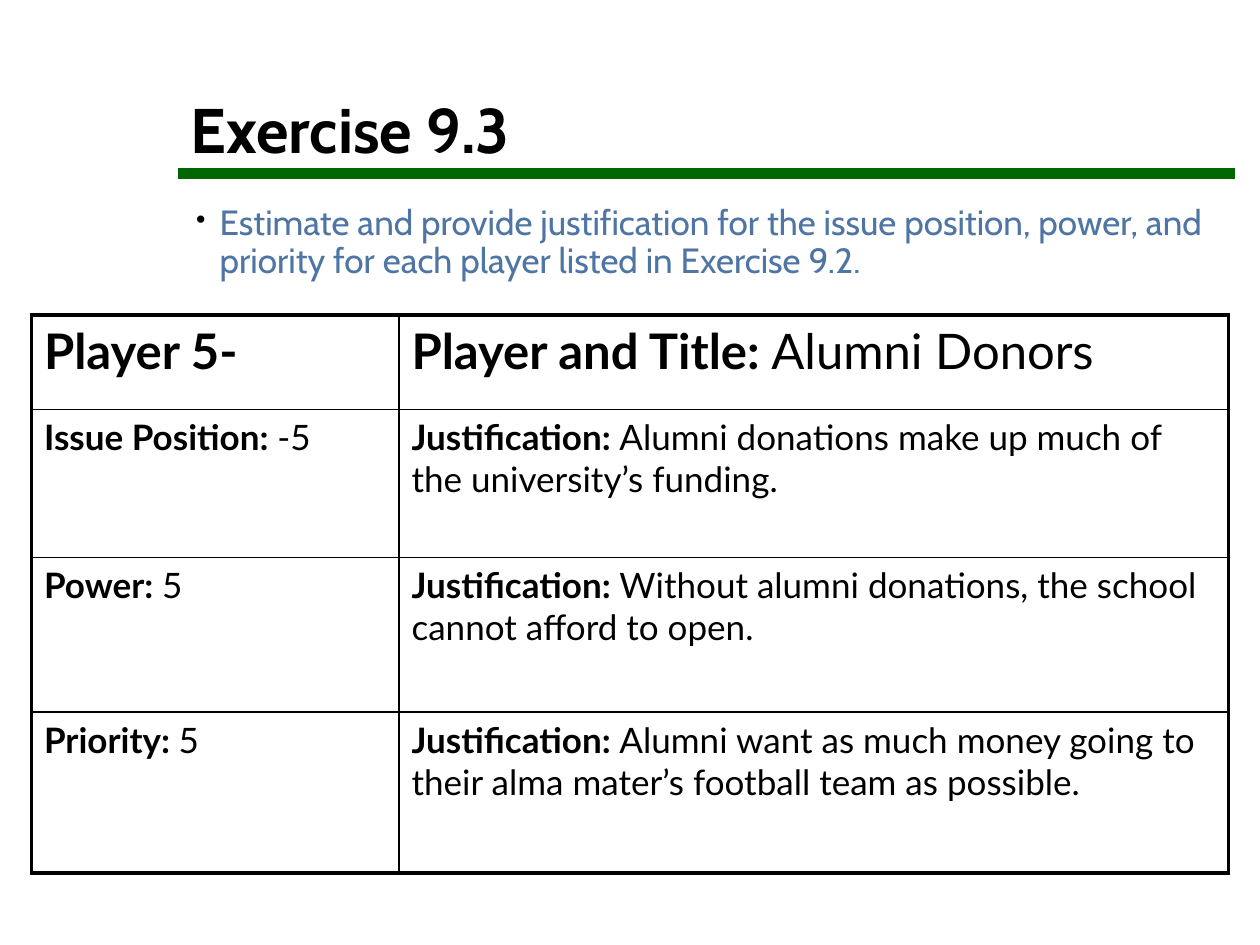
from dataclasses import dataclass

from lxml.etree import SubElement
from pptx import Presentation
from pptx.dml.color import RGBColor
from pptx.enum.shapes import MSO_CONNECTOR
from pptx.enum.text import MSO_ANCHOR
from pptx.oxml.ns import qn
from pptx.util import Pt


@dataclass(frozen=True)
class Theme:
    heading_font: str = "Cabin"
    table_font: str = "Lato"
    ink: str = "000000"
    prompt: str = "4E75A3"
    rule: str = "006600"
    title_size: float = 36
    header_size: float = 28
    body_size: float = 20
    rule_width: float = 6
    outer_border: float = 2.25
    inner_border: float = 1


def add_text(paragraph, text, *, font, size, color, bold=False):
    run = paragraph.add_run()
    run.text = text
    run.font.name = font
    run.font.size = Pt(size)
    run.font.bold = bold
    run.font.color.rgb = RGBColor.from_string(color)


def add_solid_fill(parent, color):
    fill = SubElement(parent, qn("a:solidFill"))
    SubElement(fill, qn("a:srgbClr"), val=color)


def add_bullet(paragraph, color, left, hanging):
    """Give the paragraph a hanging bullet at 80 % of the text size."""
    properties = paragraph._p.get_or_add_pPr()
    properties.set("marL", str(Pt(left)))
    properties.set("indent", str(-Pt(hanging)))
    bullet_color = SubElement(properties, qn("a:buClr"))
    SubElement(bullet_color, qn("a:srgbClr"), val=color)
    SubElement(properties, qn("a:buSzPct"), val="80000")
    SubElement(properties, qn("a:buChar"), char="•")


class SlideBuilder:
    def __init__(self, slide, theme):
        self.slide = slide
        self.theme = theme

    def rule(self, left, right, y):
        line = self.slide.shapes.add_connector(
            MSO_CONNECTOR.STRAIGHT, Pt(left), Pt(y), Pt(right), Pt(y))
        line.line.color.rgb = RGBColor.from_string(self.theme.rule)
        line.line.width = Pt(self.theme.rule_width)
        SubElement(line._element.spPr, qn("a:effectLst"))

    def text_box(self, text, left, top, width, height, *,
                 anchor=MSO_ANCHOR.TOP, bullet=False, **text_format):
        shape = self.slide.shapes.add_textbox(
            Pt(left), Pt(top), Pt(width), Pt(height))
        frame = shape.text_frame
        frame.word_wrap = True
        frame.vertical_anchor = anchor
        paragraph = frame.paragraphs[0]
        paragraph.line_spacing = 0.9
        if bullet:
            add_bullet(paragraph, self.theme.ink, left=16.5, hanging=13.5)
        add_text(paragraph, text, font=self.theme.heading_font, **text_format)

    def table(self, rows, left, top, column_widths, row_heights):
        """Draw rows of (label, value) cells inside a heavy outer frame."""
        theme = self.theme
        table = self.slide.shapes.add_table(
            len(row_heights), len(column_widths), Pt(left), Pt(top),
            Pt(sum(column_widths)), Pt(sum(row_heights))).table
        table.first_row = False
        table.horz_banding = False
        for column, width in zip(table.columns, column_widths):
            column.width = Pt(width)
        last_row, last_column = len(row_heights) - 1, len(column_widths) - 1
        for i, (height, cells) in enumerate(zip(row_heights, rows)):
            table.rows[i].height = Pt(height)
            size = theme.header_size if i == 0 else theme.body_size
            for j, (label, value) in enumerate(cells):
                cell = table.cell(i, j)
                self.borders(cell, lnL=j == 0, lnR=j == last_column,
                             lnT=i == 0, lnB=i == last_row)
                cell.fill.background()
                paragraph = cell.text_frame.paragraphs[0]
                text_format = dict(font=theme.table_font, size=size, color=theme.ink)
                add_text(paragraph, label, bold=True, **text_format)
                if value:
                    add_text(paragraph, value, **text_format)

    def borders(self, cell, **outer_sides):
        properties = cell._tc.get_or_add_tcPr()
        for side, is_outer in outer_sides.items():
            width = self.theme.outer_border if is_outer else self.theme.inner_border
            border = SubElement(properties, qn(f"a:{side}"), w=str(Pt(width)))
            add_solid_fill(border, self.theme.ink)


def main():
    presentation = Presentation()
    presentation.slide_width = Pt(720)
    presentation.slide_height = Pt(540)
    slide = presentation.slides.add_slide(presentation.slide_layouts[6])
    theme = Theme()
    builder = SlideBuilder(slide, theme)

    left, width = 102, 604
    builder.rule(left, left + width, 99.25)
    builder.text_box("Exercise 9.3", left, 18, width, 81,
                     anchor=MSO_ANCHOR.BOTTOM, size=theme.title_size,
                     color=theme.ink, bold=True)
    builder.text_box(
        "Estimate and provide justification for the issue position, power, "
        "and priority for each player listed in Exercise 9.2.",
        left, 114, width, 340, bullet=True,
        size=theme.body_size, color=theme.prompt)

    ratings = [
        ("Issue Position: ", "-5",
         "Alumni donations make up much of the university’s funding."),
        ("Power: ", "5",
         "Without alumni donations, the school cannot afford to open."),
        ("Priority: ", "5",
         "Alumni want as much money going to their alma mater’s football "
         "team as possible."),
    ]
    rows = [[("Player 5-", ""), ("Player and Title: ", "Alumni Donors")]]
    rows += [[(name, score), ("Justification: ", reason)]
             for name, score, reason in ratings]
    builder.table(rows, 18, 180, column_widths=[210, 474],
                  row_heights=[54, 84.5, 88.5, 92])

    presentation.save("out.pptx")


if __name__ == "__main__":
    main()
